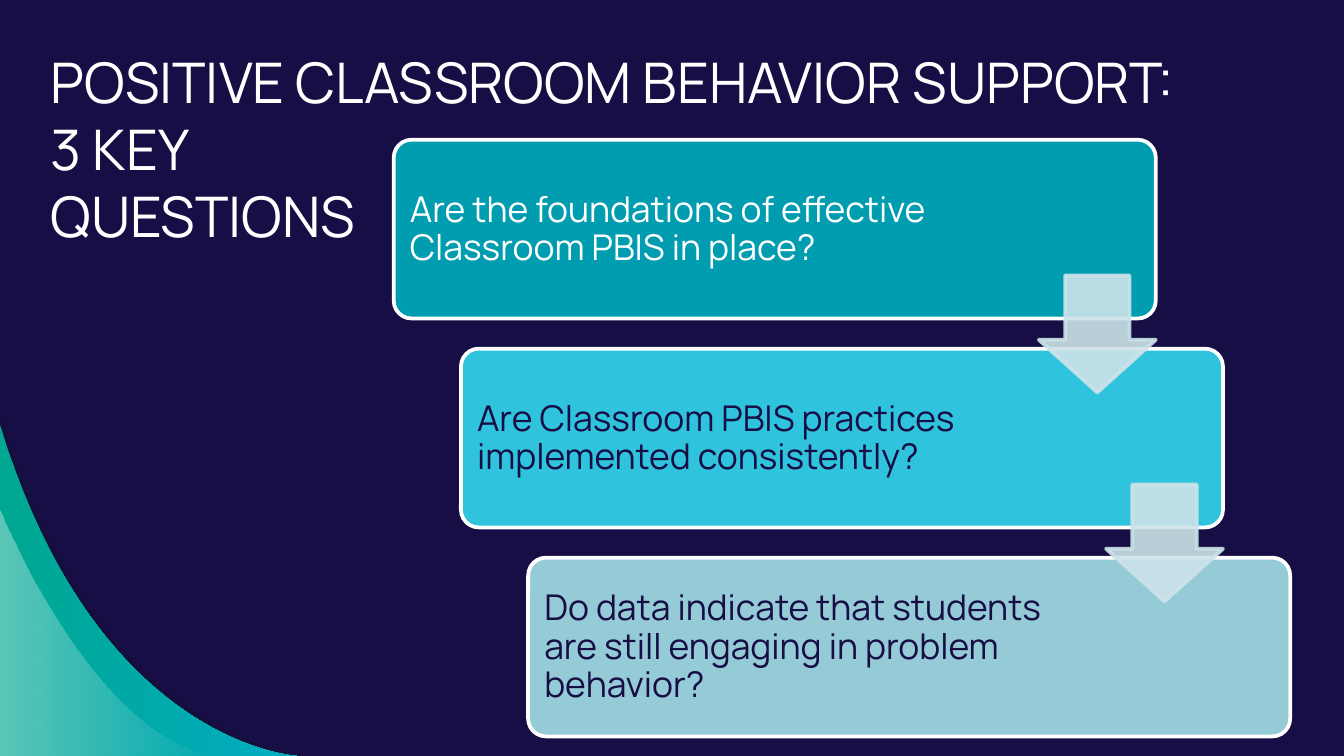
from pptx import Presentation
from pptx.dml.color import RGBColor as RGB
from pptx.enum.shapes import MSO_SHAPE as SHAPE
from pptx.enum.text import MSO_ANCHOR as ANCHOR
from pptx.oxml.ns import qn
from pptx.util import Inches, Pt
from lxml.etree import SubElement as Sub

INK = {
    "navy": "160E44", "dusk": "12102F", "white": "FFFFFF", "mist": "CCE3E9",
    "teal": "009CB0", "cyan": "30C3DE", "pale": "95CAD7",
    "green": "00A791", "blue": "00ACC2",
}
FONT = "Manrope"
WIDE = 10
HIGH = WIDE * 9 / 16


def tone(name):
    """Return the named colour."""
    return RGB.from_string(INK[name])


def fade(shape, *rates):
    """Give the colours of a shape, in order, their opacity in percent."""
    for node, rate in zip(shape.element.spPr.iter(qn("a:srgbClr")), rates):
        Sub(node, qn("a:alpha")).set("val", str(rate * 1000))


def curve(ends, steps=40):
    """Return points along a cubic curve."""
    a, b, c, d = ends
    spots = []
    for i in range(steps + 1):
        t = i / steps
        u = 1 - t
        spots.append(tuple(
            Inches(u**3 * p + 3 * u * u * t * q + 3 * u * t * t * r + t**3 * s)
            for p, q, r, s in zip(a, b, c, d)))
    return spots


class Deck:
    """Holds the style and the current slide."""

    def __init__(self):
        self.show = Presentation()
        self.show.slide_width, self.show.slide_height = Inches(WIDE), Inches(HIGH)
        self.slide = self.show.slides.add_slide(self.show.slide_layouts[6])
        fill = self.slide.background.fill
        fill.solid()
        fill.fore_color.rgb = tone("navy")

    def wave(self, ends, hues, rates=()):
        """Draw a corner wave with a plain or two-colour fill."""
        first, *rest = curve(ends)
        build = self.slide.shapes.build_freeform(*first)
        build.add_line_segments(rest + [(0, Inches(HIGH))], close=True)
        shape = build.convert_to_shape()
        shape.shadow.inherit = False
        shape.line.fill.background()
        if len(hues) == 1:
            shape.fill.solid()
            shape.fill.fore_color.rgb = tone(hues[0])
        else:
            shape.fill.gradient()
            shape.fill.gradient_angle = 0
            for stop, hue in zip(shape.fill.gradient_stops, hues):
                stop.color.rgb = tone(hue)
        fade(shape, *rates)

    def shape(self, kind, box, hue, edge, knobs):
        """Draw a filled and outlined preset shape."""
        shape = self.slide.shapes.add_shape(kind, *map(Inches, box))
        for i, knob in enumerate(knobs):
            shape.adjustments[i] = knob
        shape.shadow.inherit = False
        shape.fill.solid()
        shape.fill.fore_color.rgb = tone(hue)
        shape.line.color.rgb = tone(edge)
        shape.line.width = Pt(2)
        return shape

    def text(self, box, words, size, hue, pad, anchor=ANCHOR.TOP, lead=1.0):
        """Place one paragraph of text."""
        frame = self.slide.shapes.add_textbox(*map(Inches, box)).text_frame
        frame.word_wrap = True
        frame.vertical_anchor = anchor
        frame.margin_left = frame.margin_right = Inches(pad)
        frame.margin_top = frame.margin_bottom = Inches(pad)
        para = frame.paragraphs[0]
        para.text = words
        para.line_spacing = lead
        for run in para.runs:
            run.font.name, run.font.size = FONT, Pt(size)
            run.font.color.rgb = tone(hue)

    def card(self, x, y, words, hue, ink):
        """Draw a question card."""
        self.shape(SHAPE.ROUNDED_RECTANGLE, (x, y, 5.67, 1.33), hue, "white", [0.1])
        self.text((x + 0.04, y + 0.04, 4.22, 1.26), words, 19, ink, 0.08,
                  ANCHOR.MIDDLE, 0.9)

    def arrow(self, x, y):
        """Draw a see-through arrow to the next card."""
        shape = self.shape(SHAPE.DOWN_ARROW, (x, y, 0.87, 0.87), "mist", "mist",
                           [0.55, 0.45])
        fade(shape, 90, 90)


def main():
    """Build the slide."""
    deck = Deck()
    deck.wave([(0, 3.1), (0.73, 5.54), (2.27, HIGH), (2.27, HIGH)], ["dusk"], [54])
    deck.wave([(0, 3.16), (0.72, 5.55), (2.21, HIGH), (2.21, HIGH)], ["green", "blue"])
    deck.wave([(0, 3.8), (0, 3.8), (0.69, 5.51), (1.62, HIGH)],
              ["white", "white"], [36, 0])
    cards = [
        ("Are the foundations of effective Classroom PBIS in place?", "teal", "white"),
        ("Are Classroom PBIS practices implemented consistently?", "cyan", "navy"),
        ("Do data indicate that students are still engaging in problem behavior?",
         "pale", "navy"),
    ]
    top, last = 1.04, 4.15
    right, down = 0.5, (last - top) / (len(cards) - 1)
    for i, card in enumerate(cards):
        deck.card(2.93 + i * right, top + i * down, *card)
    for i in range(len(cards) - 1):
        deck.arrow(7.73 + i * right, 2.05 + i * down)
    deck.text((0.28, 0.25, 9.24, 0.69),
              "POSITIVE CLASSROOM BEHAVIOR SUPPORT: \v3 KEY \vQUESTIONS",
              30, "white", 0.1)
    deck.show.save("out.pptx")


if __name__ == "__main__":
    main()
